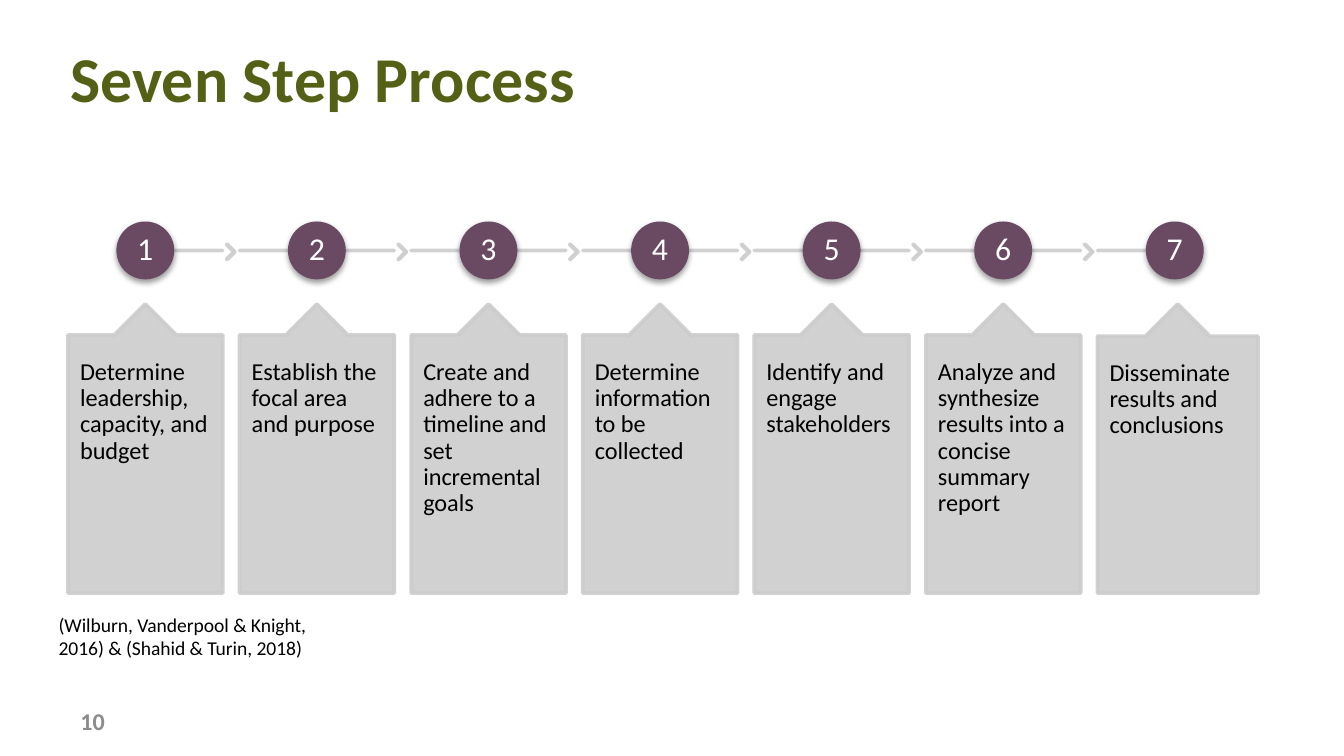
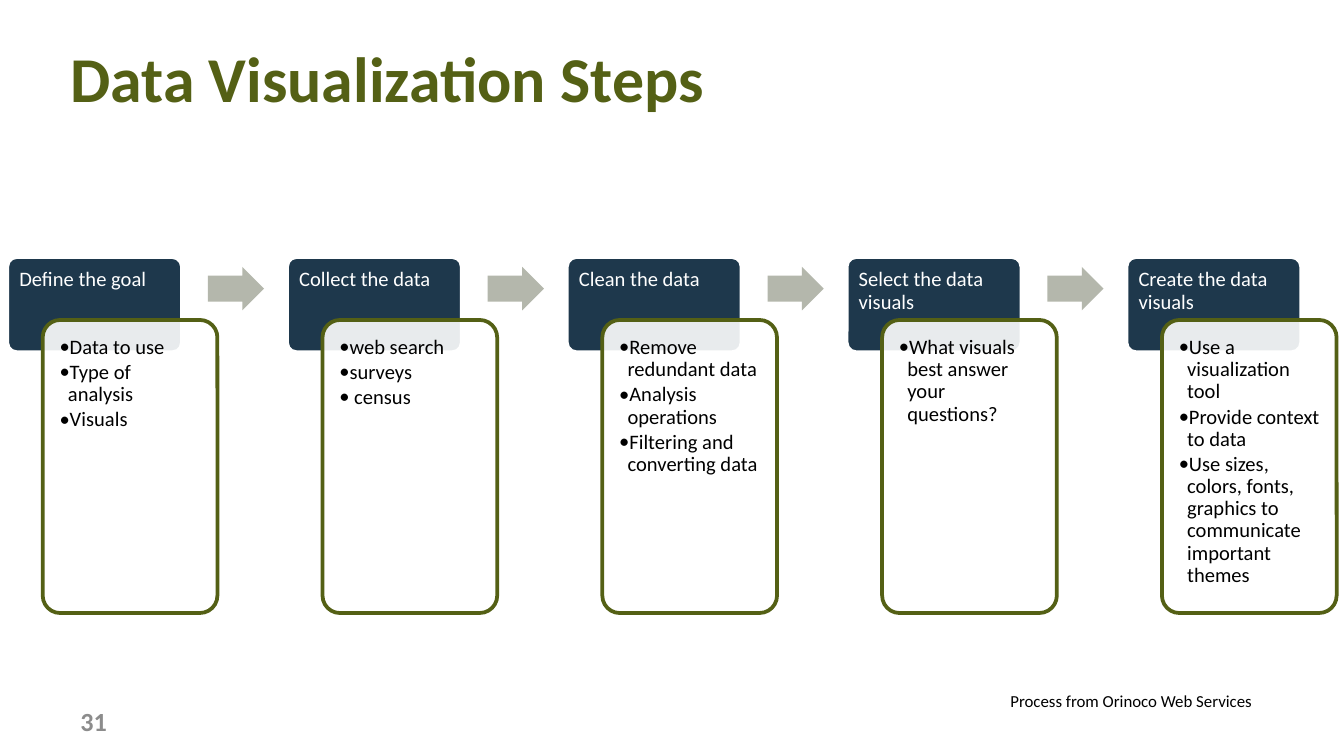
"""Build two process slides: seven numbered steps and five data visualization steps."""
from lxml import etree
from pptx import Presentation
from pptx.dml.color import RGBColor
from pptx.enum.shapes import MSO_CONNECTOR, MSO_SHAPE
from pptx.enum.text import MSO_ANCHOR, PP_ALIGN
from pptx.oxml.ns import qn
from pptx.util import Pt

STRAIGHT = MSO_CONNECTOR.STRAIGHT
CHEVRON, OVAL, CALLOUT = MSO_SHAPE.CHEVRON, MSO_SHAPE.OVAL, MSO_SHAPE.UP_ARROW_CALLOUT
ROUNDED, RIGHT_ARROW = MSO_SHAPE.ROUNDED_RECTANGLE, MSO_SHAPE.RIGHT_ARROW
TOP, MIDDLE = MSO_ANCHOR.TOP, MSO_ANCHOR.MIDDLE
LEFT, CENTER = PP_ALIGN.LEFT, PP_ALIGN.CENTER

FONT = "Calibri"
OLIVE = RGBColor(0x54, 0x60, 0x15)
PLUM = RGBColor(0x6A, 0x4A, 0x62)
NAVY = RGBColor(0x1E, 0x38, 0x4C)
SAGE = RGBColor(0xB4, 0xB7, 0xAC)
SILVER = RGBColor(0xCC, 0xCC, 0xCC)
GRAY = RGBColor(0x8C, 0x8C, 0x8C)
BLACK = RGBColor(0, 0, 0)
WHITE = RGBColor(0xFF, 0xFF, 0xFF)
OPACITY = "90000"


def write_text(shape, lines, size, color, bold=False, align=LEFT, anchor=TOP,
               margins=(7.2, 3.6), spacing=1, bullet=False):
    """Fill a shape with one paragraph per line; margins are horizontal and vertical."""
    frame = shape.text_frame
    across, down = (Pt(margin) for margin in margins)
    frame_format = {"word_wrap": True, "vertical_anchor": anchor, "margin_left": across,
                    "margin_right": across, "margin_top": down, "margin_bottom": down}
    for name, value in frame_format.items():
        setattr(frame, name, value)
    for index, line in enumerate(lines):
        paragraph = frame.paragraphs[0] if index == 0 else frame.add_paragraph()
        paragraph.alignment = align
        paragraph.line_spacing = spacing
        run = paragraph.add_run()
        run.text = line
        run.font.color.rgb = color
        for name, value in {"name": FONT, "size": Pt(size), "bold": bold}.items():
            setattr(run.font, name, value)
        if bullet:
            paragraph.level = 1
            paragraph.space_after = Pt(1.6)
            properties = paragraph._p.get_or_add_pPr()
            properties.set("marL", str(Pt(4.5)))
            properties.set("indent", str(-Pt(4.5)))
            etree.SubElement(properties, qn("a:buFont"), typeface=FONT)
            etree.SubElement(properties, qn("a:buChar"), char="•")


def add_box(slide, kind, box, fill, line=None, adjustments=(), translucent=False):
    """Add a flat preset shape, with a 2 pt outline when a line colour is given."""
    shape = slide.shapes.add_shape(kind, *(Pt(length) for length in box))
    shape.shadow.inherit = False
    for index, value in enumerate(adjustments):
        shape.adjustments[index] = value
    shape.fill.solid()
    shape.fill.fore_color.rgb = fill
    if line is None:
        shape.line.fill.background()
    else:
        shape.line.color.rgb = line
        shape.line.width = Pt(2)
    if translucent:
        colors = list(shape.element.spPr.iter(qn("a:srgbClr")))
        for color in colors if line == fill else colors[:1]:
            etree.SubElement(color, qn("a:alpha"), val=OPACITY)
    return shape


presentation = Presentation()
presentation.slide_width = Pt(720)
presentation.slide_height = Pt(405)

slides = []
for title, number, number_size, note, note_box, note_size in (
    ("Seven Step Process", "10", 12.9,
     "(Wilburn, Vanderpool & Knight, 2016) & (Shahid & Turin, 2018)",
     (24.3, 324.6, 157.7, 37.4), 10.5),
    ("Data Visualization Steps", "31", 14,
     "Process from Orinoco Web Services", (534.2, 366.5, 155.5, 18), 9),
):
    slide = presentation.slides.add_slide(presentation.slide_layouts[6])
    slides.append(slide)
    for text, box, text_format in (
        (title, (30.6, 22.3, 658.8, 37.4),
         {"size": 34.2, "color": OLIVE, "bold": True, "anchor": MIDDLE}),
        (number, (36, 375.4, 162, 21.6),
         {"size": number_size, "color": GRAY, "bold": True, "anchor": MIDDLE}),
        (note, note_box, {"size": note_size, "color": BLACK}),
    ):
        text_box = slide.shapes.add_textbox(*(Pt(length) for length in box))
        write_text(text_box, [text], **text_format)

process_slide, visualization_slide = slides

process_steps = (
    "Determine leadership, capacity, and budget",
    "Establish the focal area and purpose",
    "Create and adhere to a timeline and set incremental goals",
    "Determine information to be collected",
    "Identify and engage stakeholders",
    "Analyze and synthesize results into a concise summary report",
    "Disseminate results and conclusions",
)
STEP_LEFT, STEP_PITCH, STEP_WIDTH = 36.4, 91.92, 82.9
TRACK_TOP, CIRCLE = 134.2, 31

for index, step in enumerate(process_steps):
    is_first, is_last = index == 0, index == len(process_steps) - 1
    left = STEP_LEFT + index * STEP_PITCH
    middle = left + STEP_WIDTH / 2
    start = middle if is_first else left
    end = middle if is_last else left + STEP_WIDTH
    track = process_slide.shapes.add_connector(
        STRAIGHT, Pt(start), Pt(TRACK_TOP), Pt(end), Pt(TRACK_TOP))
    track.line.color.rgb = SILVER
    track.line.width = Pt(2)
    track.element.spPr.find(qn("a:ln")).set("cap", "rnd")
    for color in track.element.spPr.iter(qn("a:srgbClr")):
        etree.SubElement(color, qn("a:alpha"), val=OPACITY)
    etree.SubElement(track.element.spPr, qn("a:effectLst"))

    if not is_last:
        add_box(process_slide, CHEVRON, (left + 85, 131, 4.4, 7.9),
                SILVER, SILVER, (0.9,), translucent=True)

    circle = add_box(process_slide, OVAL,
                     (middle - CIRCLE / 2, TRACK_TOP - CIRCLE / 2, CIRCLE, CIRCLE), PLUM)
    effects = circle.element.spPr.find(qn("a:effectLst"))
    shadow = etree.SubElement(effects, qn("a:outerShdw"), blurRad=str(Pt(3.1)),
                              dist=str(Pt(1.6)), dir="5400000", rotWithShape="0")
    shadow_color = etree.SubElement(shadow, qn("a:srgbClr"), val=str(BLACK))
    etree.SubElement(shadow_color, qn("a:alpha"), val="38000")
    write_text(circle, [str(index + 1)], 17, WHITE, align=CENTER, anchor=MIDDLE,
               margins=(1.2, 1.2), spacing=0.9)

    width = 86 if is_last else STEP_WIDTH
    callout = add_box(process_slide, CALLOUT, (left, 162.9, width, 154.8),
                      SILVER, SILVER, (0.5, 0.2, 0.2, 1), translucent=True)
    write_text(callout, [step], 13, BLACK, margins=(6.5, 13), spacing=0.9)

visualization_steps = (
    ("Define the goal", ("Data to use", "Type of analysis", "Visuals")),
    ("Collect the data", ("web search", "surveys", " census")),
    ("Clean the data", ("Remove redundant data", "Analysis operations",
                        "Filtering and converting data")),
    ("Select the data visuals", ("What visuals best answer your questions?",)),
    ("Create the data visuals", (
        "Use a visualization tool", "Provide context to data",
        "Use sizes, colors, fonts, graphics to communicate important themes")),
)
CARD_LEFT, CARD_PITCH, CARD_WIDTH = 3.9, 149.9, 93.6

for index, (heading, details) in enumerate(visualization_steps):
    left = CARD_LEFT + index * CARD_PITCH
    header = add_box(visualization_slide, ROUNDED, (left, 137.7, CARD_WIDTH, 51),
                     NAVY, WHITE, (0.1,))
    write_text(header, [heading], 11, WHITE, margins=(5, 5), spacing=0.9)
    card = add_box(visualization_slide, ROUNDED, (left + 19, 171.4, CARD_WIDTH, 157),
                   WHITE, OLIVE, (0.1,), translucent=True)
    write_text(card, details, 11, BLACK, margins=(6.3, 6.3), spacing=0.9, bullet=True)
    if index < len(visualization_steps) - 1:
        add_box(visualization_slide, RIGHT_ARROW, (left + 107.5, 143, 30.1, 23.3),
                SAGE, adjustments=(0.6, 0.5))

presentation.save("out.pptx")
